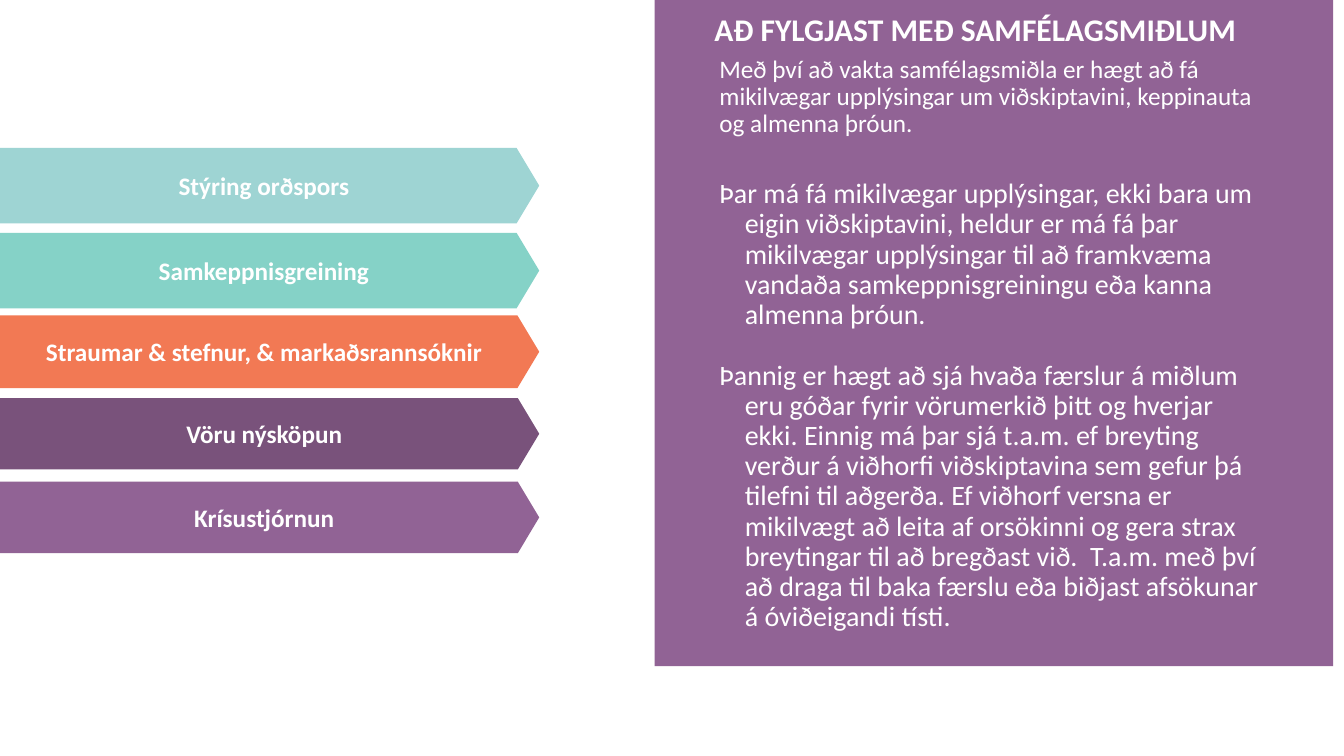
from lxml import etree
from pptx import Presentation
from pptx.dml.color import RGBColor
from pptx.enum.shapes import MSO_SHAPE
from pptx.enum.text import MSO_ANCHOR, MSO_AUTO_SIZE, PP_ALIGN
from pptx.oxml.ns import qn
from pptx.util import Cm, Pt

RECT, PENTAGON = MSO_SHAPE.RECTANGLE, MSO_SHAPE.PENTAGON
LEFT, CENTER = PP_ALIGN.LEFT, PP_ALIGN.CENTER
TOP, MIDDLE = MSO_ANCHOR.TOP, MSO_ANCHOR.MIDDLE
NO_FIT = MSO_AUTO_SIZE.NONE
PURPLE, WHITE = "916395", "FFFFFF"

TITLE = "AÐ FYLGJAST MEÐ SAMFÉLAGSMIÐLUM"
INTRO = ("Með því að vakta samfélagsmiðla er hægt að fá mikilvægar upplýsingar "
         "um viðskiptavini, keppinauta og almenna þróun.")
DETAILS = [
    "Þar má fá mikilvægar upplýsingar, ekki bara um eigin viðskiptavini, "
    "heldur er má fá þar mikilvægar upplýsingar til að framkvæma vandaða "
    "samkeppnisgreiningu eða kanna almenna þróun.",
    "Þannig er hægt að sjá hvaða færslur á miðlum eru góðar fyrir vörumerkið "
    "þitt og hverjar ekki. Einnig má þar sjá t.a.m. ef breyting verður á "
    "viðhorfi viðskiptavina sem gefur þá tilefni til aðgerða. Ef viðhorf "
    "versna er mikilvægt að leita af orsökinni og gera strax breytingar til "
    "að bregðast við.  T.a.m. með því að draga til baka færslu eða biðjast "
    "afsökunar á óviðeigandi tísti.",
]
# Label, top (cm), height (cm), fill
ARROWS = [
    ("Stýring orðspors", 3.73, 1.9, "9ED4D3"),
    ("Samkeppnisgreining", 5.87, 1.9, "85D2C7"),
    ("Straumar & stefnur, & markaðsrannsóknir", 7.95, 1.83, "F27954"),
    ("Vöru nýsköpun", 10.03, 1.8, "79527B"),
    ("Krísustjórnun", 12.14, 1.8, PURPLE),
]


def color(value):
    return RGBColor.from_string(value)


def set_attrs(obj, values):
    for name, value in values.items():
        setattr(obj, name, value)


class SlideBuilder:
    font = {"name": "Calibri", "bold": False}
    frame = {"word_wrap": True, "auto_size": NO_FIT,
             "margin_left": Cm(0.25), "margin_right": Cm(0.25),
             "margin_top": Cm(0.13), "margin_bottom": Cm(0.13)}

    def __init__(self, slide):
        self.s = slide

    def add_text(self, sp, texts, size, bold=False, align=LEFT, anchor=TOP,
                 spacing=1.0, gap=0, hanging=0):
        tf = sp.text_frame
        set_attrs(tf, {**self.frame, "vertical_anchor": anchor})
        for i, text in enumerate(texts):
            p = tf.paragraphs[0] if i == 0 else tf.add_paragraph()
            set_attrs(p, {"alignment": align, "line_spacing": spacing,
                          "space_before": Pt(gap if i else 0), "space_after": Pt(0)})
            pPr = p._p.get_or_add_pPr()
            pPr.set("marL", str(Cm(hanging)))
            pPr.set("indent", str(-Cm(hanging)))
            etree.SubElement(pPr, qn("a:buNone"))
            r = p.add_run()
            r.text = text
            set_attrs(r.font, {**self.font, "size": Pt(size), "bold": bold})
            r.font.color.rgb = color(WHITE)

    def shape(self, kind, left, top, width, height, fill):
        sp = self.s.shapes.add_shape(kind, Cm(left), Cm(top), Cm(width), Cm(height))
        sp.shadow.inherit = False
        sp.fill.solid()
        sp.fill.fore_color.rgb = color(fill)
        sp.line.fill.background()
        return sp

    def panel(self, left, top, width, height, fill):
        sp = self.shape(RECT, left, top, width, height, fill)
        self.s.shapes.element.insert(2, sp.element)  # behind the placeholders

    def arrow(self, label, top, height, fill):
        sp = self.shape(PENTAGON, 0, top, 13.59, height, fill)
        sp.adjustments[0] = 0.3
        self.add_text(sp, [label], 18, bold=True, align=CENTER, anchor=MIDDLE)

    def placeholder(self, idx, left, top, height, texts, size, **style):
        sp = self.s.placeholders[idx]
        set_attrs(sp, {"left": Cm(left), "top": Cm(top),
                       "width": Cm(14.12), "height": Cm(height)})
        self.add_text(sp, texts, size, **style)


def main():
    prs = Presentation()
    prs.slide_width, prs.slide_height = Cm(33.87), Cm(19.05)
    builder = SlideBuilder(prs.slides.add_slide(prs.slide_layouts[3]))

    # Text panel on the right
    builder.panel(16.5, -0.48, 17.1, 17.27, PURPLE)
    builder.placeholder(0, 17.75, 0.38, 1.63, [TITLE], 22.5, bold=True, spacing=0.7)
    builder.placeholder(1, 17.88, 1.3, 1.63, [INTRO], 18, spacing=0.9)
    builder.placeholder(2, 17.88, 4.39, 11.96, DETAILS, 20,
                        spacing=0.9, gap=21.6, hanging=0.64)

    # Topic arrows on the left
    for arrow in ARROWS:
        builder.arrow(*arrow)

    prs.save("out.pptx")


if __name__ == "__main__":
    main()
